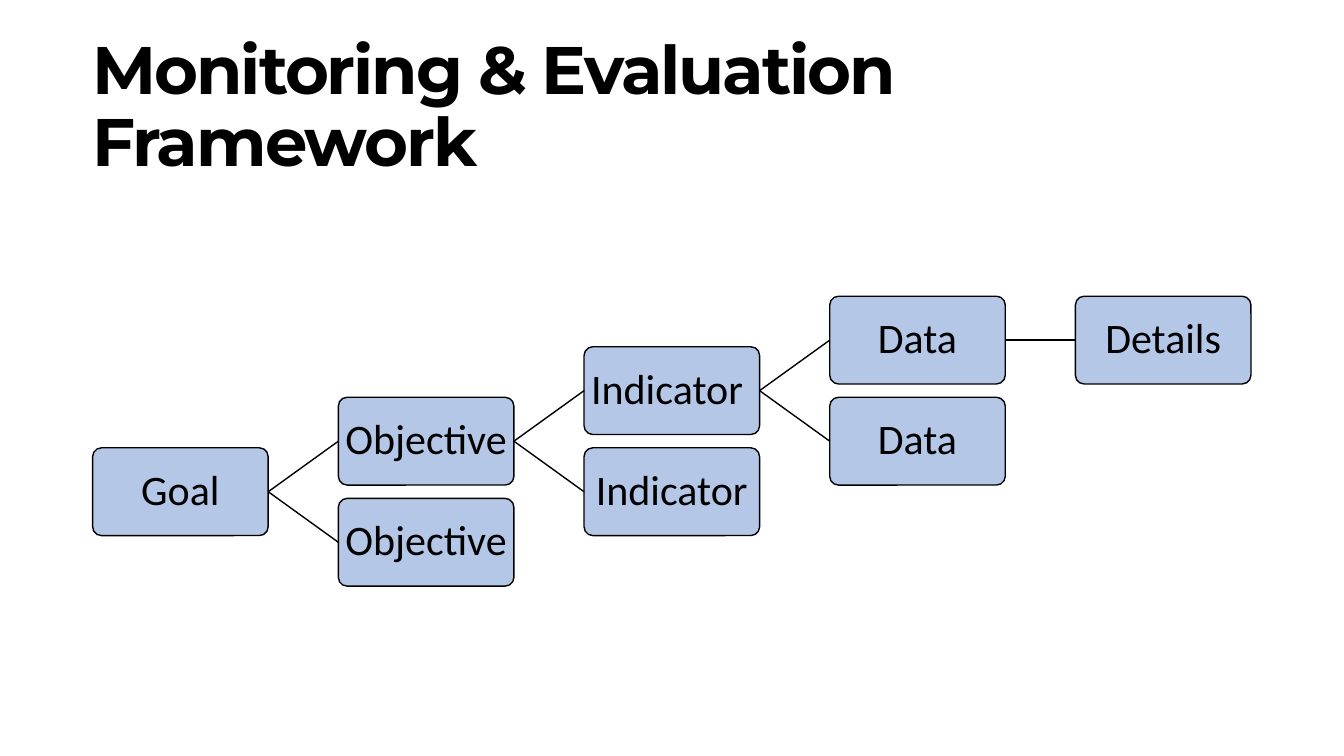
from pptx import Presentation
from pptx.dml.color import RGBColor
from pptx.enum.shapes import MSO_CONNECTOR, MSO_SHAPE
from pptx.enum.text import MSO_ANCHOR, PP_ALIGN
from pptx.oxml.ns import qn
from pptx.util import Pt
from lxml.etree import SubElement

BLACK = "000000"
BLUE = "B4C7E7"
LEFT, TOP = 66.2, 211.6
WIDE, HIGH = 125.4, 62.7
STEP, RISE = 175.5, 36.1
LEFT_SIDE, RIGHT_SIDE = 1, 3

NODES = {
    "goal": ("Goal", 0, 3),
    "aim 1": ("Objective", 1, 2),
    "aim 2": ("Objective", 1, 4),
    "sign 1": ("Indicator ", 2, 1),
    "sign 2": ("Indicator", 2, 3),
    "data 1": ("Data", 3, 0),
    "data 2": ("Data", 3, 2),
    "detail": ("Details", 4, 0),
}
LINKS = [
    ("goal", "aim 1"),
    ("goal", "aim 2"),
    ("aim 1", "sign 1"),
    ("aim 1", "sign 2"),
    ("sign 1", "data 1"),
    ("sign 1", "data 2"),
    ("data 1", "detail"),
]


def paint(target, color):
    target.solid()
    target.fore_color.rgb = RGBColor.from_string(color)


def write(shape, text, size, font, bold=False, align=PP_ALIGN.LEFT,
          anchor=MSO_ANCHOR.MIDDLE, inset=(0, 0, 0, 0), track=0):
    frame = shape.text_frame
    frame.word_wrap = True
    frame.vertical_anchor = anchor
    (frame.margin_left, frame.margin_top,
     frame.margin_right, frame.margin_bottom) = map(Pt, inset)
    line = frame.paragraphs[0]
    line.alignment = align
    line.line_spacing = 0.9
    run = line.add_run()
    run.text = text
    run.font.size = Pt(size)
    run.font.name = font
    run.font.bold = bold
    paint(run.font.fill, BLACK)
    if track:
        for props in shape.element.iter(qn("a:rPr")):
            props.set("spc", str(int(track * 100)))


def add_title(slide, text):
    box = slide.shapes.add_textbox(Pt(66.2), Pt(28.8), Pt(708.5), Pt(104.4))
    write(box, text, 48, "Montserrat", bold=True, anchor=MSO_ANCHOR.BOTTOM,
          inset=(0, 3.6, 7.2, 3.6), track=-1.5)


def add_node(slide, text, col, row):
    node = slide.shapes.add_shape(
        MSO_SHAPE.ROUNDED_RECTANGLE, Pt(LEFT + col * STEP),
        Pt(TOP + row * RISE), Pt(WIDE), Pt(HIGH))
    node.adjustments[0] = 0.1
    node.shadow.inherit = False
    paint(node.fill, BLUE)
    paint(node.line.fill, BLACK)
    node.line.width = Pt(1)
    write(node, text, 30, "Calibri", align=PP_ALIGN.CENTER, inset=(1.5,) * 4)
    return node


def add_link(slide, start, end):
    link = slide.shapes.add_connector(MSO_CONNECTOR.STRAIGHT, 0, 0, 0, 0)
    link.begin_connect(start, RIGHT_SIDE)
    link.end_connect(end, LEFT_SIDE)
    paint(link.line.fill, BLACK)
    link.line.width = Pt(1)
    SubElement(link.element.spPr, qn("a:effectLst"))


def main():
    deck = Presentation()
    deck.slide_width, deck.slide_height = Pt(960), Pt(540)
    slide = deck.slides.add_slide(deck.slide_layouts[6])
    add_title(slide, "Monitoring & Evaluation Framework")
    nodes = {key: add_node(slide, *node) for key, node in NODES.items()}
    for start, end in LINKS:
        add_link(slide, nodes[start], nodes[end])
    deck.save("out.pptx")


if __name__ == "__main__":
    main()
